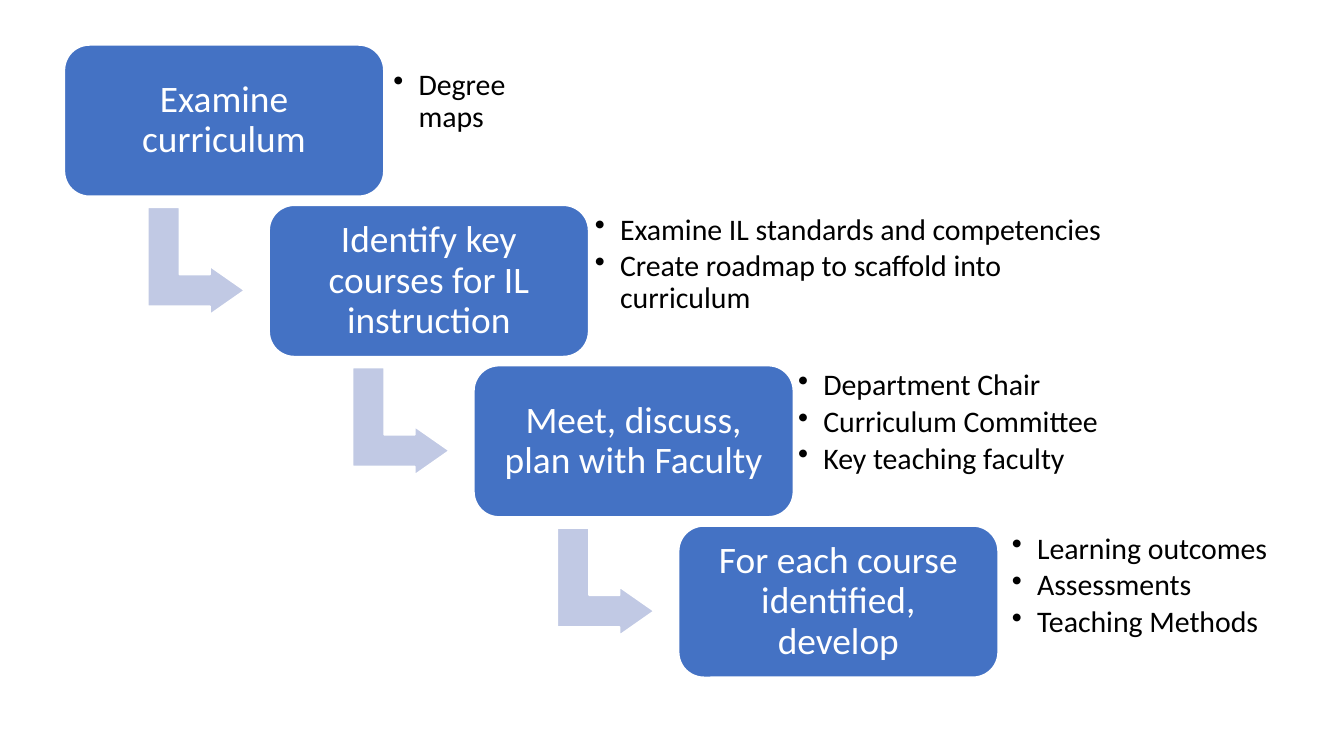
from dataclasses import dataclass

from lxml import etree
from pptx import Presentation
from pptx.dml.color import RGBColor
from pptx.enum.shapes import MSO_SHAPE
from pptx.enum.text import MSO_ANCHOR, PP_ALIGN
from pptx.oxml.ns import qn
from pptx.util import Pt

ROUNDED = MSO_SHAPE.ROUNDED_RECTANGLE
BENT_ARROW = MSO_SHAPE.BENT_UP_ARROW
MIDDLE = MSO_ANCHOR.MIDDLE
CENTER, LEFT = PP_ALIGN.CENTER, PP_ALIGN.LEFT


@dataclass(frozen=True)
class Theme:
    """Colours, font and type sizes of the slide."""
    step: RGBColor = RGBColor(0x44, 0x72, 0xC4)
    arrow: RGBColor = RGBColor(0xC1, 0xC9, 0xE4)
    white: RGBColor = RGBColor(0xFF, 0xFF, 0xFF)
    black: RGBColor = RGBColor(0x00, 0x00, 0x00)
    font: str = "Calibri"
    label_size: float = 20
    note_size: float = 16


@dataclass(frozen=True)
class Box:
    """A rectangle in points."""
    left: float
    top: float
    width: float
    height: float

    def inner(self, left, top, width, height):
        """Return a box placed relative to this one."""
        return Box(self.left + left, self.top + top, width, height)

    def lengths(self):
        """Return the four lengths for python-pptx."""
        return Pt(self.left), Pt(self.top), Pt(self.width), Pt(self.height)


THEME = Theme()
FIRST_STEP = Box(34.4, 24, 171.3, 81.2)
STEP_RIGHT, STEP_DOWN = 109.7, 85.9
STEPS = [
    ("Examine curriculum", ["Degree maps"], (171.4, -2.4, 85, 66.2)),
    ("Identify key courses for IL instruction",
     ["Examine IL standards and competencies",
      "Create roadmap to scaffold into curriculum"],
     (169.6, -0.4, 288.7, 64.8)),
    ("Meet, discuss, plan with Faculty",
     ["Department Chair", "Curriculum Committee", "Key teaching faculty"],
     (168.8, -2.4, 212.4, 66.2)),
    ("For each course identified, develop",
     ["Learning outcomes", "Assessments", "Teaching Methods"],
     (173.6, -0.7, 212.4, 66.2)),
]


def add_bullet(paragraph, indent):
    """Give a paragraph a round bullet with a hanging indent."""
    properties = paragraph._p.get_or_add_pPr()
    properties.set("marL", str(Pt(indent)))
    properties.set("indent", str(-Pt(indent)))
    etree.SubElement(properties, qn("a:buChar")).set("char", "•")


def write_text(shape, lines, *, size, color, align, inset, space_after=0, bullet_indent=None):
    """Write one paragraph per line into a shape."""
    frame = shape.text_frame
    frame.word_wrap = True
    frame.vertical_anchor = MIDDLE
    frame.margin_left = frame.margin_right = Pt(inset)
    frame.margin_top = frame.margin_bottom = Pt(inset)
    for index, line in enumerate(lines):
        paragraph = frame.add_paragraph() if index else frame.paragraphs[0]
        paragraph.alignment = align
        paragraph.line_spacing = 0.9
        paragraph.space_after = Pt(space_after)
        if bullet_indent:
            paragraph.level = 1
            add_bullet(paragraph, bullet_indent)
        run = paragraph.add_run()
        run.text = line
        run.font.name = THEME.font
        run.font.size = Pt(size)
        run.font.color.rgb = color


def add_block(slide, kind, box, fill, adjustments):
    """Add a filled preset shape with a thin white outline."""
    shape = slide.shapes.add_shape(kind, *box.lengths())
    shape.shadow.inherit = False
    shape.fill.solid()
    shape.fill.fore_color.rgb = fill
    shape.line.color.rgb = THEME.white
    shape.line.width = Pt(1)
    for index, value in enumerate(adjustments):
        shape.adjustments[index] = value
    return shape


def add_step(slide, box, label, notes, notes_place, has_arrow):
    """Add one step: its arrow to the next, its label and its notes."""
    if has_arrow:
        arrow_box = box.inner(41.9, 89.8, 57.6, 52)
        arrow = add_block(slide, BENT_ARROW, arrow_box, THEME.arrow, (0.328, 0.25, 0.358))
        arrow.rotation = 90
    block = add_block(slide, ROUNDED, box, THEME.step, (0.167,))
    write_text(block, [label], size=THEME.label_size, color=THEME.white,
               align=CENTER, inset=6)
    notes_box = slide.shapes.add_textbox(*box.inner(*notes_place).lengths())
    write_text(notes_box, notes, size=THEME.note_size, color=THEME.black,
               align=LEFT, inset=5, space_after=2.4, bullet_indent=13.5)


def add_staircase(slide, first_box):
    """Add all steps, each moved right and down from the one before."""
    for index, (label, notes, notes_place) in enumerate(STEPS):
        box = first_box.inner(index * STEP_RIGHT, index * STEP_DOWN,
                              first_box.width, first_box.height)
        add_step(slide, box, label, notes, notes_place, index < len(STEPS) - 1)


def main():
    """Build and save the presentation."""
    presentation = Presentation()
    presentation.slide_width, presentation.slide_height = Pt(720), Pt(405)
    slide = presentation.slides.add_slide(presentation.slide_layouts[6])
    add_staircase(slide, FIRST_STEP)
    presentation.save("out.pptx")


if __name__ == "__main__":
    main()
